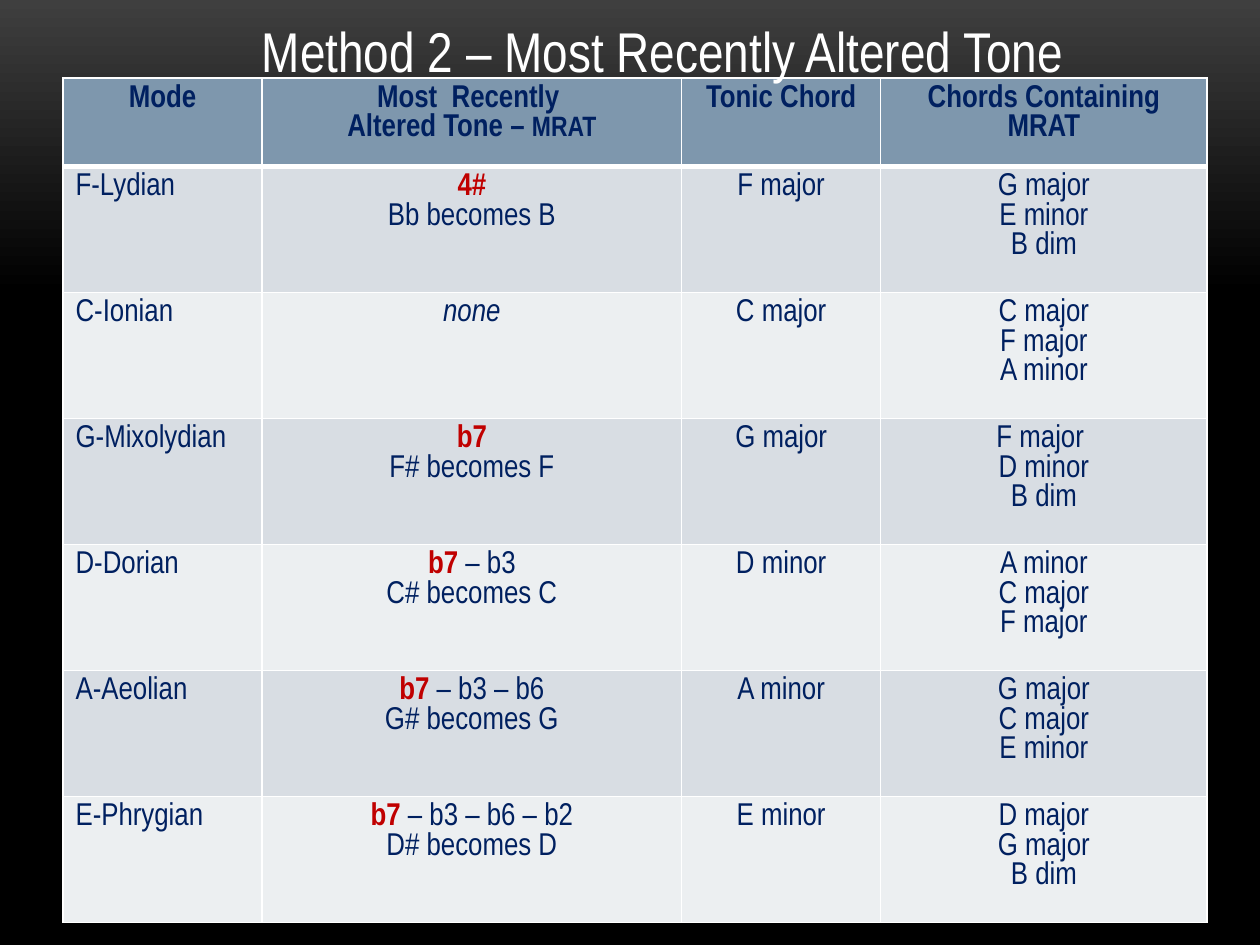
from lxml.etree import SubElement
from pptx import Presentation
from pptx.dml.color import RGBColor
from pptx.enum.text import MSO_AUTO_SIZE, PP_ALIGN
from pptx.oxml.ns import qn
from pptx.util import Inches, Pt

FONT = "Arial Narrow"
NAVY, RED, WHITE, BLACK = "002060", "C00000", "FFFFFF", "000000"
HEADER_FILL, BAND_FILLS = "7E97AD", ("D8DDE3", "ECEFF1")
COLUMN_WIDTHS = (1.58, 3.33, 1.58, 2.59)
HEADER_HEIGHT, MODE_HEIGHT = 0.7, 1.0

HEADERS = (
    ["Mode"],
    ["Most  Recently ", ("Altered Tone – ", "MRAT")],
    ["Tonic Chord"],
    ["Chords Containing", "MRAT"],
)
MODES = (
    ("F-Lydian", "4#", "", "Bb becomes B", "F major", ["G major", "E minor", "B dim"]),
    ("C-Ionian", "", "none", "", "C major", ["C major", "F major", "A minor"]),
    ("G-Mixolydian", "b7", "", "F# becomes F", "G major", ["F major ", "D minor", "B dim"]),
    ("D-Dorian", "b7 ", "– b3", "C# becomes C", "D minor", ["A minor", "C major", "F major"]),
    ("A-Aeolian", "b7 ", "– b3 – b6", "G# becomes G", "A minor", ["G major", "C major", "E minor"]),
    ("E-Phrygian", "b7 ", "– b3 – b6 – b2", "D# becomes D", "E minor", ["D major", "G major", "B dim"]),
)


def color(value):
    return RGBColor.from_string(value)


def style_span(span, size=18, shade=NAVY, bold=False, italic=False):
    span.font.name = FONT
    span.font.size = Pt(size)
    span.font.color.rgb = color(shade)
    span.font.bold = bold
    span.font.italic = italic


def set_background(page):
    fill = page.background.fill
    fill.gradient()
    fill.gradient_angle = 270
    for stop, position, shade in zip(fill.gradient_stops, (0, 0.31), ("3F3F3F", BLACK)):
        stop.position = position
        stop.color.rgb = color(shade)


def add_borders(cell, bottom):
    properties = cell._tc.get_or_add_tcPr()
    for side, width in (("L", 1), ("R", 1), ("T", 1), ("B", bottom)):
        line = SubElement(properties, qn(f"a:ln{side}"), w=str(Pt(width)))
        solid = SubElement(line, qn("a:solidFill"))
        SubElement(solid, qn("a:srgbClr"), val=WHITE)


def fill_cell(cell, lines, shade, align=PP_ALIGN.CENTER, bottom=1, bold=False):
    add_borders(cell, bottom)
    cell.fill.solid()
    cell.fill.fore_color.rgb = color(shade)
    frame = cell.text_frame
    for index, line in enumerate(lines):
        para = frame.add_paragraph() if index else frame.paragraphs[0]
        para.alignment = align
        for text in (line,) if isinstance(line, str) else line:
            span = para.add_run()
            span.text = text
            style_span(span, bold=bold)


def fill_tone(cell, altered, others, change, shade):
    first = tuple(text for text in (altered, others) if text)
    fill_cell(cell, [first, change] if change else [first], shade)
    span = cell.text_frame.paragraphs[0].runs[0]
    if altered:
        style_span(span, shade=RED, bold=True)
    else:
        style_span(span, italic=True)


def add_mode_table(page):
    height = HEADER_HEIGHT + MODE_HEIGHT * len(MODES)
    table = page.shapes.add_table(
        len(MODES) + 1, len(COLUMN_WIDTHS),
        Inches(0.5), Inches(0.62), Inches(sum(COLUMN_WIDTHS)), Inches(height),
    ).table
    for column, width in zip(table.columns, COLUMN_WIDTHS):
        column.width = Inches(width)
    for index, row in enumerate(table.rows):
        row.height = Inches(MODE_HEIGHT if index else HEADER_HEIGHT)
    for index, lines in enumerate(HEADERS):
        fill_cell(table.cell(0, index), lines, HEADER_FILL, bottom=3, bold=True)
    style_span(table.cell(0, 1).text_frame.paragraphs[1].runs[1], size=16, bold=True)
    for index, (mode, altered, others, change, tonic, chords) in enumerate(MODES):
        shade = BAND_FILLS[index % 2]
        name, tone, tonic_chord, containing = table.rows[index + 1].cells
        fill_cell(name, [mode], shade, PP_ALIGN.LEFT)
        fill_tone(tone, altered, others, change, shade)
        fill_cell(tonic_chord, [tonic], shade)
        fill_cell(containing, chords, shade)


def add_title(page):
    box = page.shapes.add_textbox(Inches(1.95), Inches(0.08), Inches(6.62), Inches(0.64))
    frame = box.text_frame
    frame.text = "Method 2 – Most Recently Altered Tone"
    frame.word_wrap = False
    frame.auto_size = MSO_AUTO_SIZE.SHAPE_TO_FIT_TEXT
    para = frame.paragraphs[0]
    para.alignment = PP_ALIGN.CENTER
    style_span(para.runs[0], size=32, shade=WHITE)


def main():
    deck = Presentation()
    deck.slide_width, deck.slide_height = Inches(10), Inches(7.5)
    page = deck.slides.add_slide(deck.slide_layouts[6])
    set_background(page)
    add_mode_table(page)
    add_title(page)
    deck.save("out.pptx")


if __name__ == "__main__":
    main()
